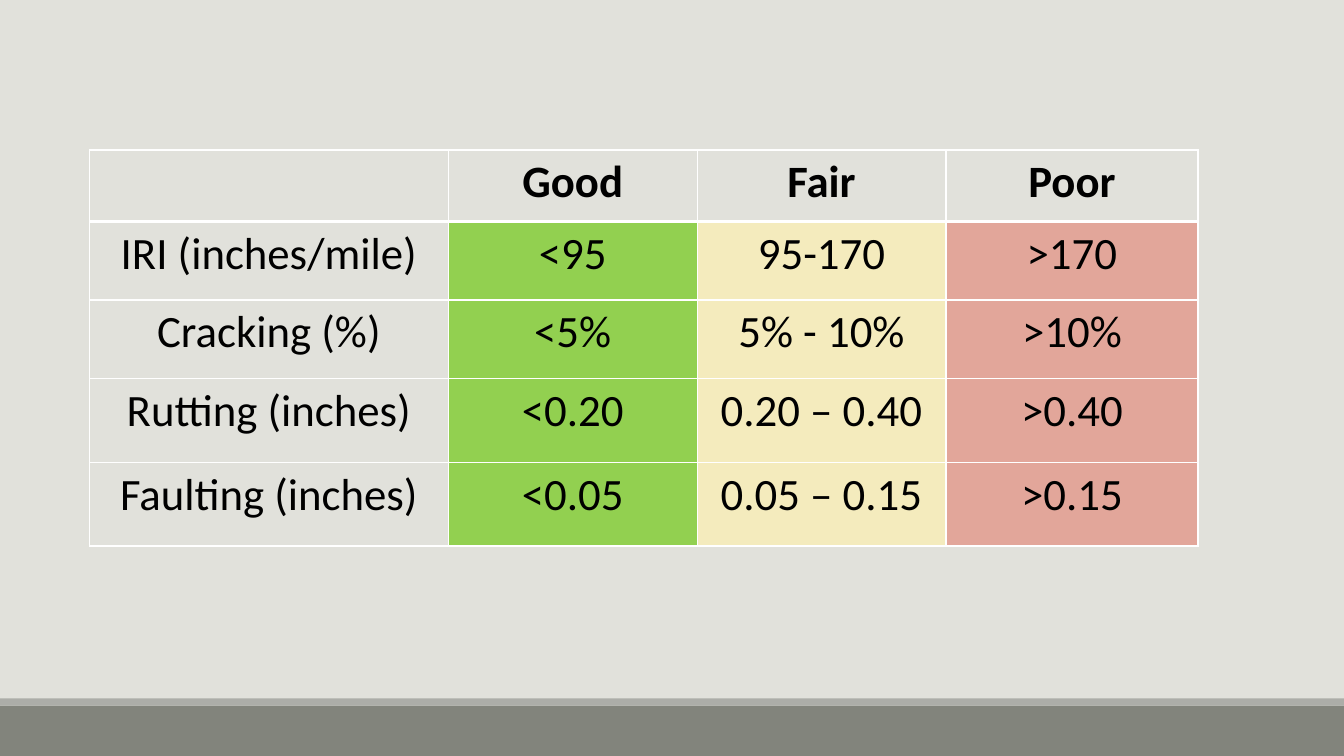
from dataclasses import dataclass
from typing import Optional

from lxml import etree
from pptx import Presentation
from pptx import util as u
from pptx.dml import color
from pptx.enum import shapes, text
from pptx.oxml import ns


@dataclass(frozen=True)
class Theme:
    background: str = "E1E1DB"
    footer: str = "82847C"
    footer_edge: str = "ACADA8"
    ink: str = "000000"
    border: str = "FFFFFF"
    good: str = "92D050"
    fair: str = "F4EBBD"
    poor: str = "E2A69A"
    font: str = "Calibri"
    size: int = 32
    thin: int = 1
    thick: int = 3


@dataclass(frozen=True)
class Band:
    top: float
    height: float
    fill: str


@dataclass(frozen=True)
class Column:
    width: float
    fill: Optional[str]


@dataclass(frozen=True)
class Row:
    height: float
    texts: tuple[str, str, str, str]


THEME = Theme()
PAGE_WIDTH, PAGE_HEIGHT = 33.87, 19.05
TABLE_LEFT, TABLE_TOP = 2.26, 3.78
BANDS = (
    Band(17.78, 1.27, THEME.footer),
    Band(17.6, 0.18, THEME.footer_edge),
)
COLUMNS = (
    Column(9.04, None),
    Column(6.27, THEME.good),
    Column(6.27, THEME.fair),
    Column(6.35, THEME.poor),
)
ROWS = (
    Row(1.8, ("", "Good", "Fair", "Poor")),
    Row(1.98, ("IRI (inches/mile)", "<95", "95-170", ">170")),
    Row(1.98, ("Cracking (%)", "<5%", "5% - 10%", ">10%")),
    Row(2.11, ("Rutting (inches)", "<0.20", "0.20 – 0.40", ">0.40")),
    Row(2.11, ("Faulting (inches)", "<0.05", "0.05 – 0.15", ">0.15")),
)


def rgb(value: str) -> color.RGBColor:
    return color.RGBColor.from_string(value)


def draw_band(page, band: Band) -> None:
    box = page.shapes.add_shape(
        shapes.MSO_SHAPE.RECTANGLE,
        u.Cm(0), u.Cm(band.top), u.Cm(PAGE_WIDTH), u.Cm(band.height),
    )
    box.shadow.inherit = False
    box.fill.solid()
    box.fill.fore_color.rgb = rgb(band.fill)
    box.line.fill.background()


def set_borders(cell, widths: dict[str, int]) -> None:
    properties = cell._tc.get_or_add_tcPr()
    for side, width in widths.items():
        line = etree.SubElement(properties, ns.qn(f"a:ln{side}"), w=str(u.Pt(width)))
        fill = etree.SubElement(line, ns.qn("a:solidFill"))
        etree.SubElement(fill, ns.qn("a:srgbClr"), val=THEME.border)


def fill_cell(cell, content: str, fill: Optional[str], header: bool) -> None:
    if fill:
        cell.fill.solid()
        cell.fill.fore_color.rgb = rgb(fill)
    else:
        cell.fill.background()
    cell.text_frame.text = content
    para = cell.text_frame.paragraphs[0]
    para.alignment = text.PP_ALIGN.CENTER
    for span in para.runs:
        span.font.name = THEME.font
        span.font.size = u.Pt(THEME.size)
        span.font.bold = header
        span.font.color.rgb = rgb(THEME.ink)


def draw_ratings(page) -> None:
    table = page.shapes.add_table(
        len(ROWS), len(COLUMNS), u.Cm(TABLE_LEFT), u.Cm(TABLE_TOP),
        u.Cm(sum(column.width for column in COLUMNS)),
        u.Cm(sum(row.height for row in ROWS)),
    ).table
    table.horz_banding = False
    for index, column in enumerate(COLUMNS):
        table.columns[index].width = u.Cm(column.width)
    for row_index, row in enumerate(ROWS):
        table.rows[row_index].height = u.Cm(row.height)
        header = row_index == 0
        widths = {
            "L": THEME.thin,
            "R": THEME.thin,
            "T": THEME.thick if row_index == 1 else THEME.thin,
            "B": THEME.thick if header else THEME.thin,
        }
        for column_index, (column, content) in enumerate(zip(COLUMNS, row.texts)):
            cell = table.cell(row_index, column_index)
            set_borders(cell, widths)
            fill_cell(cell, content, None if header else column.fill, header)


def main() -> None:
    deck = Presentation()
    deck.slide_width = u.Cm(PAGE_WIDTH)
    deck.slide_height = u.Cm(PAGE_HEIGHT)
    page = deck.slides.add_slide(deck.slide_layouts[6])
    page.background.fill.solid()
    page.background.fill.fore_color.rgb = rgb(THEME.background)
    for band in BANDS:
        draw_band(page, band)
    draw_ratings(page)
    deck.save("out.pptx")


if __name__ == "__main__":
    main()
